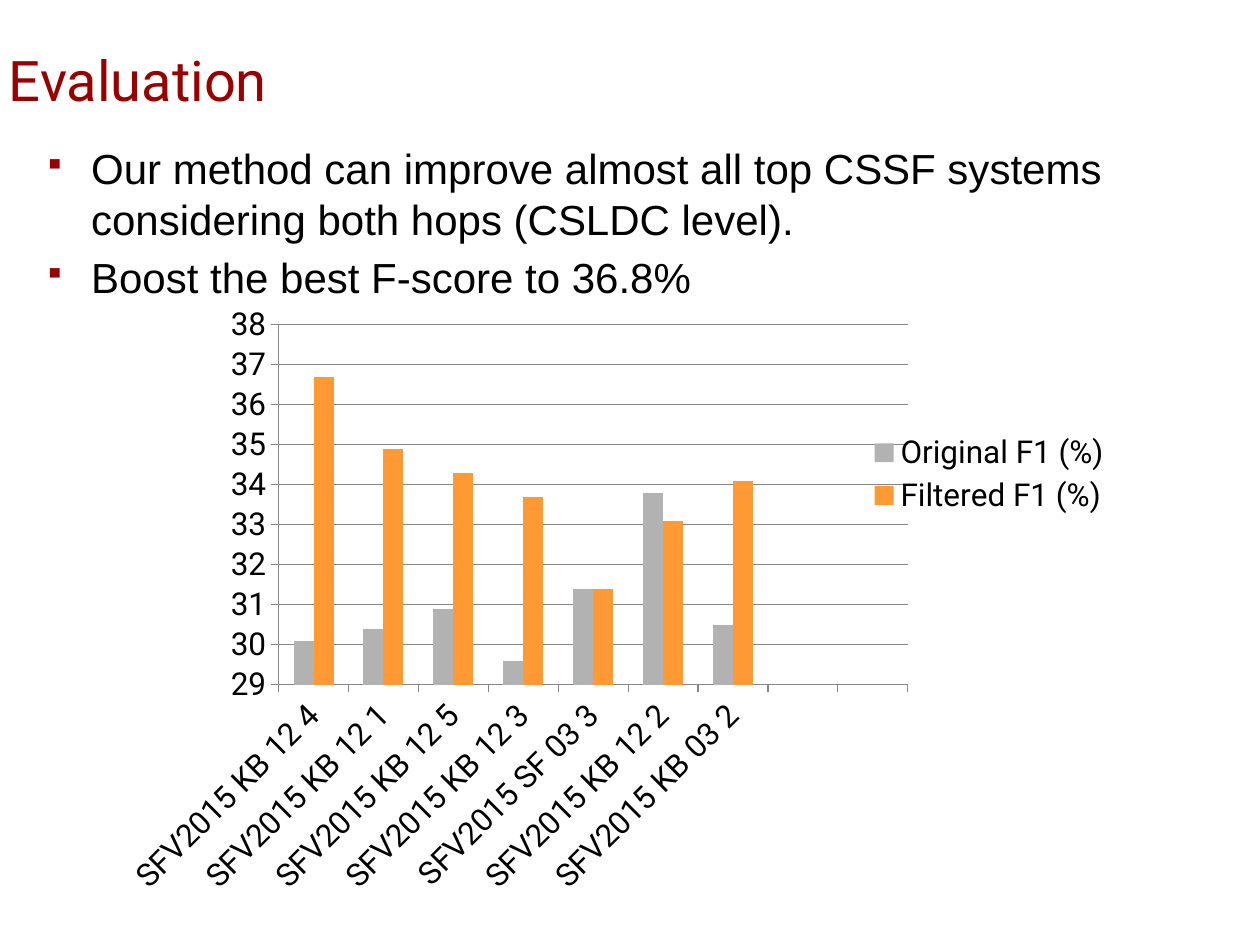
from lxml import etree
from pptx import Presentation
from pptx.chart.data import CategoryChartData
from pptx.dml.color import RGBColor
from pptx.enum import chart as ch, text
from pptx.oxml import ns, parse_xml
from pptx.util import Pt

SYSTEMS = ["KB 12 4", "KB 12 1", "KB 12 5", "KB 12 3", "SF 03 3", "KB 12 2", "KB 03 2"]
EMPTY_SLOTS = ["", ""]
SCORES = [
    ("Original F1 (%)", "B2B2B2", [30.1, 30.4, 30.9, 29.6, 31.4, 33.8, 30.5, None, 0]),
    ("Filtered F1 (%)", "FF9933", [36.7, 34.9, 34.3, 33.7, 31.4, 33.1, 34.1, None, None]),
]
FINDINGS = [
    "Our method can improve almost all top CSSF systems considering both hops (CSLDC level).",
    "Boost the best F-score to 36.8%",
]


def color(value):
    return RGBColor.from_string(value)


def manual_layout(x, y, w, h, inner=False):
    """Return a c:layout element with chart-relative fractions."""
    target = '<c:layoutTarget val="inner"/>' if inner else ""
    sizes = "".join(f'<c:{tag} val="{val}"/>' for tag, val in zip("xywh", (x, y, w, h)))
    return parse_xml(
        f'<c:layout {ns.nsdecls("c")}><c:manualLayout>{target}<c:xMode val="edge"/>'
        f'<c:yMode val="edge"/>{sizes}</c:manualLayout></c:layout>')


class Deck:
    accent, ink, axis = "990000", "000000", "868686"
    heading_font, body_font = "Roboto", "Arial"

    def __init__(self, slide):
        self.slide = slide

    def style(self, font, name, size, hue):
        font.name, font.size, font.color.rgb = name, Pt(size), color(hue)

    def frame(self, left, top, width, height):
        frame = self.slide.shapes.add_textbox(Pt(left), Pt(top), Pt(width), Pt(height)).text_frame
        frame.word_wrap = True
        return frame

    def title(self, words, *box):
        frame = self.frame(*box)
        frame.vertical_anchor = text.MSO_ANCHOR.MIDDLE
        run = frame.paragraphs[0].add_run()
        run.text = words
        self.style(run.font, self.heading_font, 32, self.accent)

    def bullets(self, items, *box):
        frame = self.frame(*box)
        for i, item in enumerate(items):
            paragraph = frame.add_paragraph() if i else frame.paragraphs[0]
            props = paragraph._p.get_or_add_pPr()
            props.set("marL", str(Pt(27)))
            props.set("indent", str(Pt(-27)))
            if i:
                paragraph.space_before = Pt(4.8)
            hue = etree.SubElement(props, ns.qn("a:buClr"))
            etree.SubElement(hue, ns.qn("a:srgbClr"), val=self.accent)
            etree.SubElement(props, ns.qn("a:buSzPct"), val="70000")
            etree.SubElement(props, ns.qn("a:buChar"), char="▪")
            run = paragraph.add_run()
            run.text = item
            self.style(run.font, self.body_font, 24, self.ink)

    def columns(self, categories, series, *box):
        data = CategoryChartData()
        data.categories = categories
        for name, _, values in series:
            data.add_series(name, values)
        chart = self.slide.shapes.add_chart(
            ch.XL_CHART_TYPE.COLUMN_CLUSTERED, *map(Pt, box), data).chart
        chart.has_title = False
        self.style(chart.font, self.heading_font, 18, self.ink)

        plot = chart.plots[0]
        plot.vary_by_categories = False
        plot.gap_width, plot.overlap = 150, 0
        for bars, (_, hue, _) in zip(plot.series, series):
            bars.format.fill.solid()
            bars.format.fill.fore_color.rgb = color(hue)
            bars.invert_if_negative = False

        scores = chart.value_axis
        scores.minimum_scale, scores.maximum_scale, scores.major_unit = 29, 38, 1
        scores.has_major_gridlines = True
        for axis in (chart.category_axis, scores):
            axis.major_tick_mark = ch.XL_TICK_MARK.OUTSIDE
            axis.minor_tick_mark = ch.XL_TICK_MARK.NONE
        for part in (chart.category_axis, scores, scores.major_gridlines):
            part.format.line.color.rgb = color(self.axis)
            part.format.line.width = Pt(0.75)
        self.style(chart.category_axis.tick_labels.font, self.heading_font, 18, self.ink)
        chart.category_axis._element.find(
            f'{ns.qn("c:txPr")}/{ns.qn("a:bodyPr")}').set("rot", "-2700000")

        chart.has_legend = True
        legend = chart.legend
        legend.position = ch.XL_LEGEND_POSITION.RIGHT
        legend.include_in_layout = True
        area = chart._chartSpace.chart.plotArea
        for old in area.findall(ns.qn("c:layout")):
            area.remove(old)
        area.insert(0, manual_layout(0.16, 0.05, 0.58, 0.59, inner=True))
        for old in legend._element.findall(ns.qn("c:layout")):
            legend._element.remove(old)
        legend._element.find(ns.qn("c:legendPos")).addnext(manual_layout(0.7, 0.22, 0.23, 0.15))


def main():
    presentation = Presentation()
    presentation.slide_width, presentation.slide_height = Pt(720), Pt(540)
    deck = Deck(presentation.slides.add_slide(presentation.slide_layouts[6]))
    deck.title("Evaluation", -2, 18, 636, 54)
    deck.bullets(FINDINGS, 18, 78, 648, 443)
    deck.columns([f"SFV2015 {system}" for system in SYSTEMS] + EMPTY_SLOTS, SCORES,
                 60, 168, 620, 349)
    presentation.save("out.pptx")


if __name__ == "__main__":
    main()
